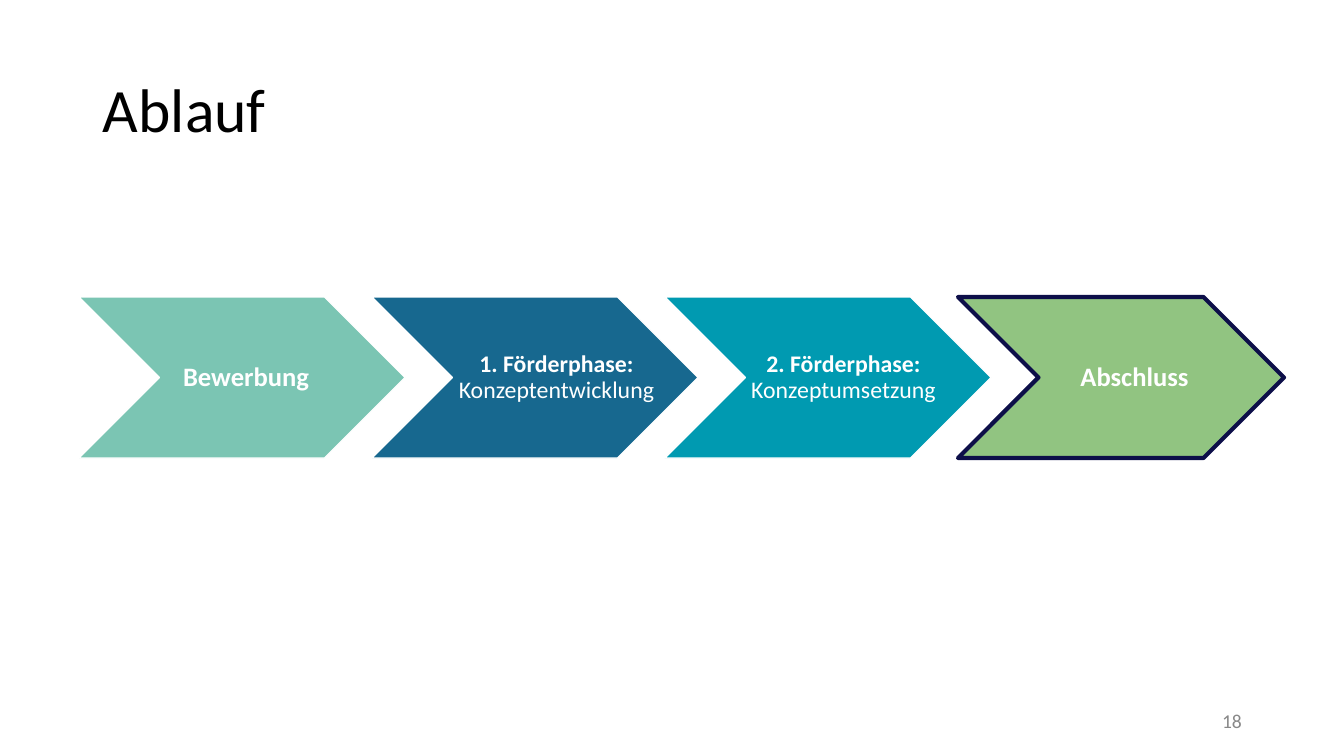
from pptx import Presentation
from pptx.dml.color import RGBColor
from pptx.enum.shapes import MSO_SHAPE
from pptx.enum.text import MSO_ANCHOR, PP_ALIGN
from pptx.util import Pt

PX = 914400 / 100.8
FONT = "Calibri"
COLORS = {
    "mint": "7BC5B3", "blue": "17688F", "teal": "009AB1", "green": "91C481",
    "navy": "0D0F49", "white": "FFFFFF", "black": "000000", "gray": "888888",
}

# fill, label left, label width, size, paragraphs of (text, bold) runs
STEPS = [
    ("mint", 144, 196, 19, [[("Bewerbung", True)]]),
    ("blue", 446, 213, 17, [[("1. Förderphase:", True)],
                            [("Konzeptentwicklung", False)]]),
    ("teal", 730, 219, 17, [[("2. Förderphase:", True),
                             (" Konzeptumsetzung", False)]]),
    ("green", 1010, 241, 19, [[("Abschluss", True)]]),
]
CURRENT = 3
LEFT, TOP, WIDTH, HEIGHT, PITCH = 79, 297, 326, 161, 293

TITLE = [[("Ablauf", False)]]
NUMBER = [[("18", False)]]
WIDE = (10, 5, 10, 5)
TIGHT = (12, 4, 4, 4)


def px(*values):
    return [round(v * PX) for v in values]


def rgb(name):
    return RGBColor.from_string(COLORS[name])


def add_text(slide, box, paras, size, color, align, insets, spacing=0.9):
    frame = slide.shapes.add_textbox(*px(*box)).text_frame
    frame.word_wrap = True
    frame.vertical_anchor = MSO_ANCHOR.MIDDLE
    (frame.margin_left, frame.margin_top,
     frame.margin_right, frame.margin_bottom) = px(*insets)
    for i, runs in enumerate(paras):
        para = frame.add_paragraph() if i else frame.paragraphs[0]
        para.alignment = align
        para.line_spacing = spacing
        for text, bold in runs:
            run = para.add_run()
            run.text = text
            font = run.font
            font.name, font.size, font.bold = FONT, Pt(size), bold
            font.color.rgb = rgb(color)


def add_arrow(slide, left, fill, line, weight):
    """Draw a chevron; a fill of None leaves only its outline."""
    arrow = slide.shapes.add_shape(
        MSO_SHAPE.CHEVRON, *px(left, TOP, WIDTH, HEIGHT))
    arrow.shadow.inherit = False
    if fill:
        arrow.fill.solid()
        arrow.fill.fore_color.rgb = rgb(fill)
    else:
        arrow.fill.background()
    arrow.line.color.rgb = rgb(line)
    arrow.line.width = Pt(weight)


def main():
    prs = Presentation()
    prs.slide_width, prs.slide_height = px(1344, 756)
    slide = prs.slides.add_slide(prs.slide_layouts[6])

    add_text(slide, (93, 40, 1159, 146), TITLE, 44, "black",
             PP_ALIGN.LEFT, WIDE)
    for i, (fill, left, width, size, paras) in enumerate(STEPS):
        add_arrow(slide, LEFT + i * PITCH, fill, "white", 1)
        add_text(slide, (left, TOP, width, HEIGHT), paras, size, "white",
                 PP_ALIGN.CENTER, TIGHT)
    add_arrow(slide, LEFT + CURRENT * PITCH, None, "navy", 3)
    add_text(slide, (950, 701, 302, 40), NUMBER, 14, "gray",
             PP_ALIGN.RIGHT, WIDE, 1.0)

    prs.save("out.pptx")


if __name__ == "__main__":
    main()
